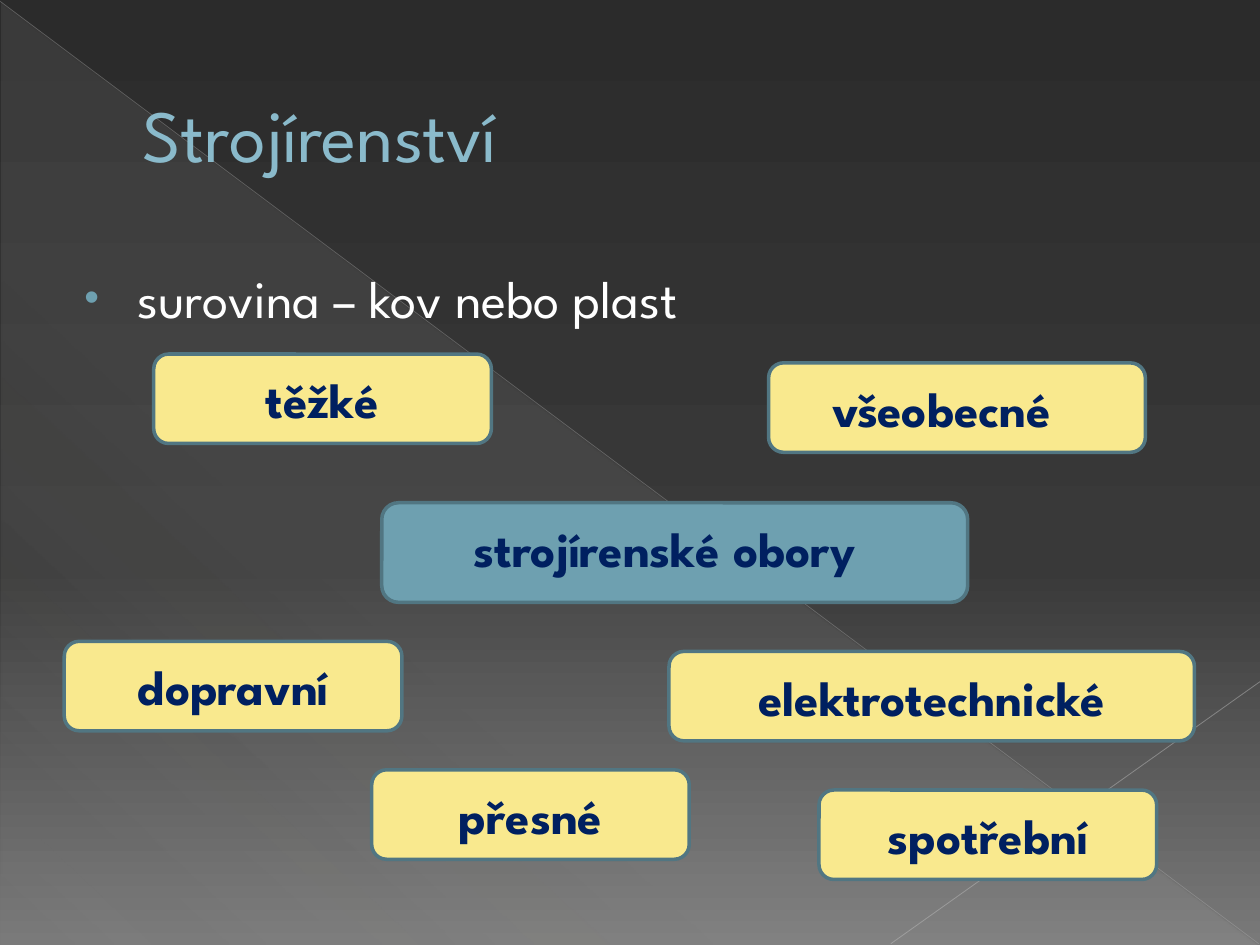
import pptx
import pptx.util
import pptx.dml.color
import pptx.enum.shapes
import pptx.enum.text
import pptx.oxml
import pptx.oxml.ns
import lxml.etree

RGB = pptx.dml.color.RGBColor
SKY = RGB(0x8A, 0xBA, 0xCB)
SLATE = RGB(0x4C, 0x6F, 0x7A)
TEAL = RGB(0x6E, 0xA0, 0xB0)
EDGE = RGB(0x51, 0x76, 0x82)
CREAM = RGB(0xF9, 0xE9, 0x8E)
NAVY = RGB(0x00, 0x20, 0x60)
WHITE = RGB(0xFF, 0xFF, 0xFF)
SAND = RGB(0xD4, 0xD2, 0xD0)
ASH = RGB(0xB7, 0xB7, 0xB7)
PALE = RGB(0xBF, 0xBF, 0xBF)
DARK = RGB(0x2B, 0x2B, 0x2B)
COAL = RGB(0x39, 0x39, 0x39)
GREY = RGB(0x79, 0x79, 0x79)

FONT = "League Spartan"
WIDE, HIGH = pptx.util.Inches(10), pptx.util.Inches(7.5)
COLS, ROWS = 100, 75
LEFT = pptx.enum.text.PP_ALIGN.LEFT
MID = pptx.enum.text.PP_ALIGN.CENTER
KIND = pptx.enum.shapes.MSO_SHAPE
TAG = pptx.oxml.ns.qn

CHIPS = [
    ("strojírenské obory", 30.3, 39.9, 46.5, 7.9, TEAL, LEFT),
    ("těžké", 12.2, 28.1, 26.8, 7.1, CREAM, MID),
    ("všeobecné", 61, 28.8, 29.9, 7.1, CREAM, LEFT),
    ("dopravní", 5.1, 50.9, 26.8, 7.1, CREAM, MID),
    ("elektrotechnické", 53.1, 51.7, 41.7, 7.1, CREAM, MID),
    ("přesné", 29.5, 61.1, 25.2, 7.1, CREAM, MID),
    ("spotřební", 65, 62.7, 26.8, 7.1, CREAM, MID),
]


def grid(*cells):
    """Turn alternating columns and rows into lengths."""
    units = (WIDE / COLS, HIGH / ROWS)
    return [round(cell * units[i % 2]) for i, cell in enumerate(cells)]


def sub(node, tag, **attrs):
    """Add a child element with attributes."""
    child = lxml.etree.SubElement(node, TAG(tag))
    for key, value in attrs.items():
        child.set(key, str(value))
    return child


def blend(fill, host, stops, angle):
    """Fill with a linear gradient of (share, colour, opacity) stops."""
    fill.gradient()
    grad = next(host.iter(TAG("a:gradFill")))
    for child in list(grad):
        grad.remove(child)
    row = sub(grad, "a:gsLst")
    for share, color, alpha in stops:
        stop = sub(row, "a:gs", pos=share * 1000)
        tint = sub(stop, "a:srgbClr", val=color)
        if alpha < 100:
            sub(tint, "a:alpha", val=alpha * 1000)
    sub(grad, "a:lin", ang=angle * 60000, scaled=0)


def style(para, size, color, bold=False):
    """Set the font of a paragraph."""
    font = para.font
    font.name, font.size, font.bold = FONT, pptx.util.Pt(size), bold
    font.color.rgb = color


def ray(slide, ends, color, width, alpha):
    """Draw a thin translucent line."""
    line = slide.shapes.add_connector(
        pptx.enum.shapes.MSO_CONNECTOR.STRAIGHT, *grid(*ends))
    line.line.color.rgb = color
    line.line.width = pptx.util.Pt(width)
    tint = next(line.element.spPr.iter(TAG("a:srgbClr")))
    sub(tint, "a:alpha", val=alpha * 1000)
    sub(line.element.spPr, "a:effectLst")


def decor(slide):
    """Paint the background, the wedge and the rays."""
    blend(slide.background.fill, slide.element,
          [(0, DARK, 100), (60, COAL, 100), (100, GREY, 100)], 90)
    wedge = slide.shapes.add_shape(
        KIND.RIGHT_TRIANGLE, *grid(0.1, 0.2, 99.8, 74.8))
    wedge.shadow.inherit = False
    wedge.line.fill.background()
    blend(wedge.fill, wedge.element,
          [(0, SAND, 10), (70, SAND, 8), (100, SAND, 1)], 133)
    ray(slide, (0, 0.1, 99.9, 74.9), ASH, 0.39, 35)
    ray(slide, (100, 54.1, 70.7, 74.9), PALE, 0.47, 45)


def place(slide, holder, cells, text, indent):
    """Move a placeholder to the front and return its paragraph."""
    slide.shapes.element.append(holder.element)
    holder.left, holder.top, holder.width, holder.height = grid(*cells)
    holder.text_frame.text = text
    para = holder.text_frame.paragraphs[0]
    para.alignment = LEFT
    props = para._p.get_or_add_pPr()
    for key, inch in zip(("marL", "indent"), indent):
        props.set(key, str(pptx.util.Inches(inch)))
    return para


def title(slide, text):
    """Write the outlined title."""
    holder = slide.shapes.title
    para = place(slide, holder, (5, 2.9, 90, 15.3), text, (0.53, 0))
    holder.text_frame.vertical_anchor = pptx.enum.text.MSO_ANCHOR.MIDDLE
    style(para, 42, SKY)
    rim = pptx.oxml.parse_xml(
        f'<a:ln {pptx.oxml.ns.nsdecls("a")} w="6350"><a:solidFill>'
        f'<a:srgbClr val="{SLATE}"/></a:solidFill></a:ln>')
    para.runs[0].font._element.insert(0, rim)


def body(slide, text):
    """Write the bulleted line."""
    para = place(slide, slide.placeholders[1], (5, 20.6, 90, 6.7),
                 text, (0.49, -0.42))
    props = para._p.get_or_add_pPr()
    gap = sub(props, "a:spcBef")
    sub(gap, "a:spcPct", val=20000)
    tint = sub(props, "a:buClr")
    sub(tint, "a:srgbClr", val=TEAL)
    sub(props, "a:buSzPct", val=80000)
    sub(props, "a:buFont", typeface="Arial")
    sub(props, "a:buChar", char="•")
    style(para, 30, WHITE)


def chip(slide, text, left, top, width, height, color, align):
    """Group a rounded box with its label."""
    group = slide.shapes.add_group_shape().shapes
    box = group.add_shape(
        KIND.ROUNDED_RECTANGLE, *grid(left, top, width, height))
    box.shadow.inherit = False
    box.fill.solid()
    box.fill.fore_color.rgb = color
    box.line.color.rgb = EDGE
    box.line.width = pptx.util.Pt(2)
    pad = width * (0.09 if align == MID else 0.136)
    label = group.add_textbox(
        *grid(left + pad, top + 0.75, width * 0.82, 5.7))
    label.text_frame.word_wrap = True
    label.text_frame.text = text
    para = label.text_frame.paragraphs[0]
    para.alignment = align
    style(para, 28, NAVY, True)


def main():
    """Build and save the slide."""
    deck = pptx.Presentation()
    deck.slide_width, deck.slide_height = WIDE, HIGH
    slide = deck.slides.add_slide(deck.slide_layouts[1])
    decor(slide)
    title(slide, "Strojírenství")
    body(slide, "surovina – kov nebo plast")
    for item in CHIPS:
        chip(slide, *item)
    deck.save("out.pptx")


if __name__ == "__main__":
    main()
